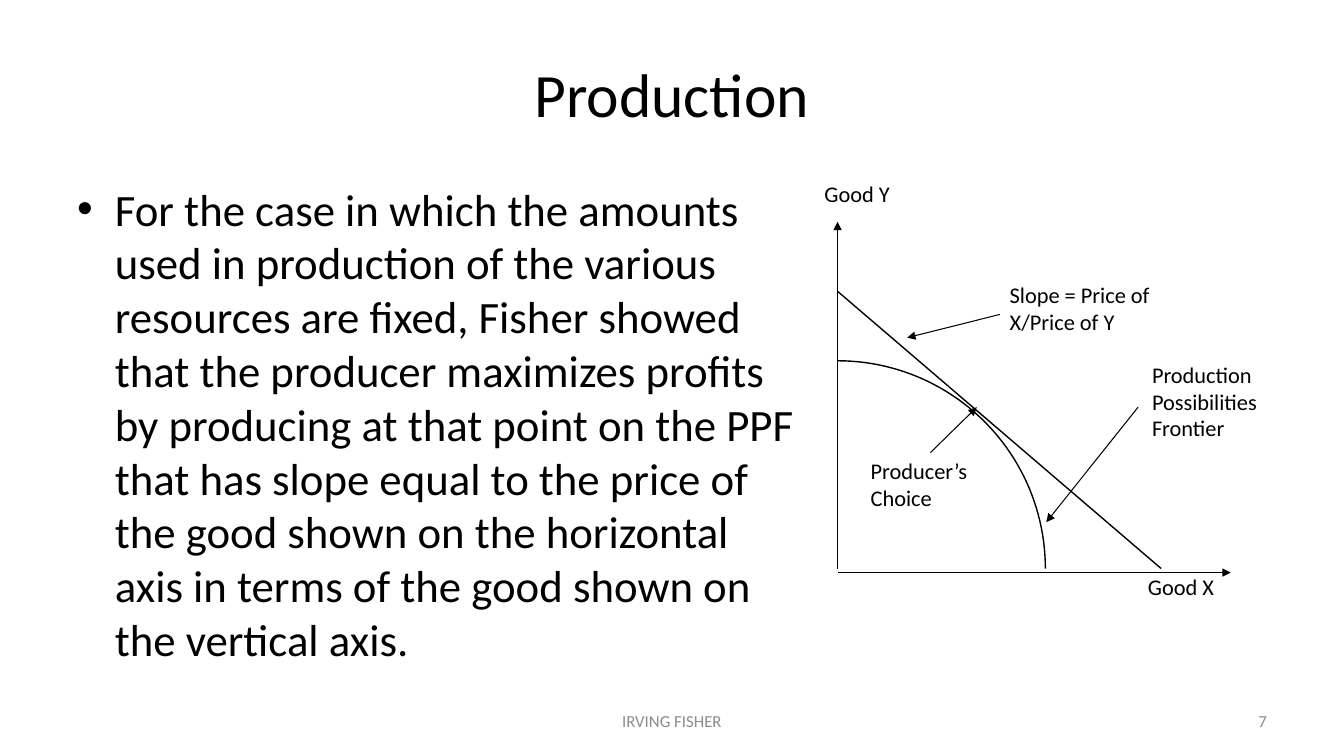
import math
from lxml import etree
from pptx import Presentation, util as u
from pptx.dml.color import RGBColor
from pptx.enum import shapes, text
from pptx.oxml.ns import qn

COLORS = {"ink": "000000", "footer": "8C8C8C"}
FONT = "Calibri"

TITLE = "Production"
ARGUMENT = (
    "For the case in which the amounts used in production of the various "
    "resources are fixed, Fisher showed that the producer maximizes profits "
    "by producing at that point on the PPF that has slope equal to the price "
    "of the good shown on the horizontal axis in terms of the good shown on "
    "the vertical axis."
)
FOOTER, PAGE = "IRVING FISHER", "7"

# Lengths are points; boxes are left, top, width, height.
ORIGIN_X, ORIGIN_Y = 598.3, 406.1
FRONTIER_RADIUS = 148.4
AXIS_Y = 409

LABELS = [
    ("Good Y", (581.8, 125.3, 82.8, 33.1)),
    ("Good X", (812.9, 406.1, 82.8, 33.1)),
    ("Production Possibilities Frontier", (815.8, 254.2, 131.8, 82.8)),
    ("Slope = Price of X/Price of Y", (714.2, 197.3, 131.8, 49.7)),
    ("Producer’s Choice", (614.9, 323.3, 115.2, 66.2)),
]
ARROWS = [
    ((ORIGIN_X, AXIS_Y), (879.1, AXIS_Y)),           # Good X axis
    ((ORIGIN_X, ORIGIN_Y), (ORIGIN_X, 158.4)),       # Good Y axis
    ((812.9, 290.9), (747.4, 373)),                  # to the frontier
    ((714.2, 224.6), (648, 241.2)),                  # to the price line
    ((664.6, 323.3), (697.7, 290.9)),                # to the chosen point
]
PRICE_LINE = ((ORIGIN_X, 208.1), (829.4, ORIGIN_Y))


def rgb(name):
    return RGBColor.from_string(COLORS[name])


def add_text(slide, words, box, size, color="ink",
             align=text.PP_ALIGN.LEFT, anchor=text.MSO_ANCHOR.TOP):
    frame = slide.shapes.add_textbox(*map(u.Pt, box)).text_frame
    frame.word_wrap = True
    frame.vertical_anchor = anchor
    paragraph = frame.paragraphs[0]
    paragraph.alignment = align
    run = paragraph.add_run()
    run.text = words
    run.font.name, run.font.size = FONT, u.Pt(size)
    run.font.color.rgb = rgb(color)
    return paragraph


def add_bullet(paragraph, indent):
    """Hang the paragraph behind a bullet, with 20% space before it."""
    props = paragraph._p.get_or_add_pPr()
    props.set("marL", str(u.Pt(indent)))
    props.set("indent", str(-u.Pt(indent)))
    before = etree.SubElement(props, qn("a:spcBef"))
    etree.SubElement(before, qn("a:spcPct"), val="20000")
    etree.SubElement(props, qn("a:buFont"), typeface="Arial")
    etree.SubElement(props, qn("a:buChar"), char="•")


def add_line(slide, start, end, width, arrow=False):
    line = slide.shapes.add_connector(
        shapes.MSO_CONNECTOR.STRAIGHT, *map(u.Pt, start + end))
    line.line.color.rgb = rgb("ink")
    line.line.width = u.Pt(width)
    if arrow:
        etree.SubElement(line.line._get_or_add_ln(), qn("a:tailEnd"), type="triangle")
    etree.SubElement(line._element.spPr, qn("a:effectLst"))


def add_frontier(slide, steps=48):
    """Draw a quarter circle from the Good Y axis down to the Good X axis."""
    angles = [math.pi / 2 * (1 - step / steps) for step in range(steps + 1)]
    curve = [(u.Pt(ORIGIN_X + FRONTIER_RADIUS * math.cos(angle)),
              u.Pt(ORIGIN_Y - FRONTIER_RADIUS * math.sin(angle))) for angle in angles]
    builder = slide.shapes.build_freeform(*curve[0])
    builder.add_line_segments(curve[1:], close=False)
    frontier = builder.convert_to_shape()
    frontier.shadow.inherit = False
    frontier.fill.background()
    frontier.line.color.rgb = rgb("ink")
    frontier.line.width = u.Pt(1)


def main():
    deck = Presentation()
    deck.slide_width, deck.slide_height = u.Pt(960), u.Pt(540)
    slide = deck.slides.add_slide(deck.slide_layouts[6])
    middle, align = text.MSO_ANCHOR.MIDDLE, text.PP_ALIGN

    add_text(slide, TITLE, (48, 21.6, 864, 90), 44, align=align.CENTER, anchor=middle)
    argument = add_text(slide, ARGUMENT, (48, 126, 534, 356.4), 32)
    add_bullet(argument, 27)
    add_text(slide, FOOTER, (328, 500.5, 304, 28.8), 12, "footer", align.CENTER, middle)
    add_text(slide, PAGE, (688, 500.5, 224, 28.8), 12, "footer", align.RIGHT, middle)

    for start, end in ARROWS:
        add_line(slide, start, end, 0.75, arrow=True)
    add_frontier(slide)
    add_line(slide, *PRICE_LINE, 1)
    for words, box in LABELS:
        add_text(slide, words, box, 16)

    deck.save("out.pptx")


if __name__ == "__main__":
    main()
